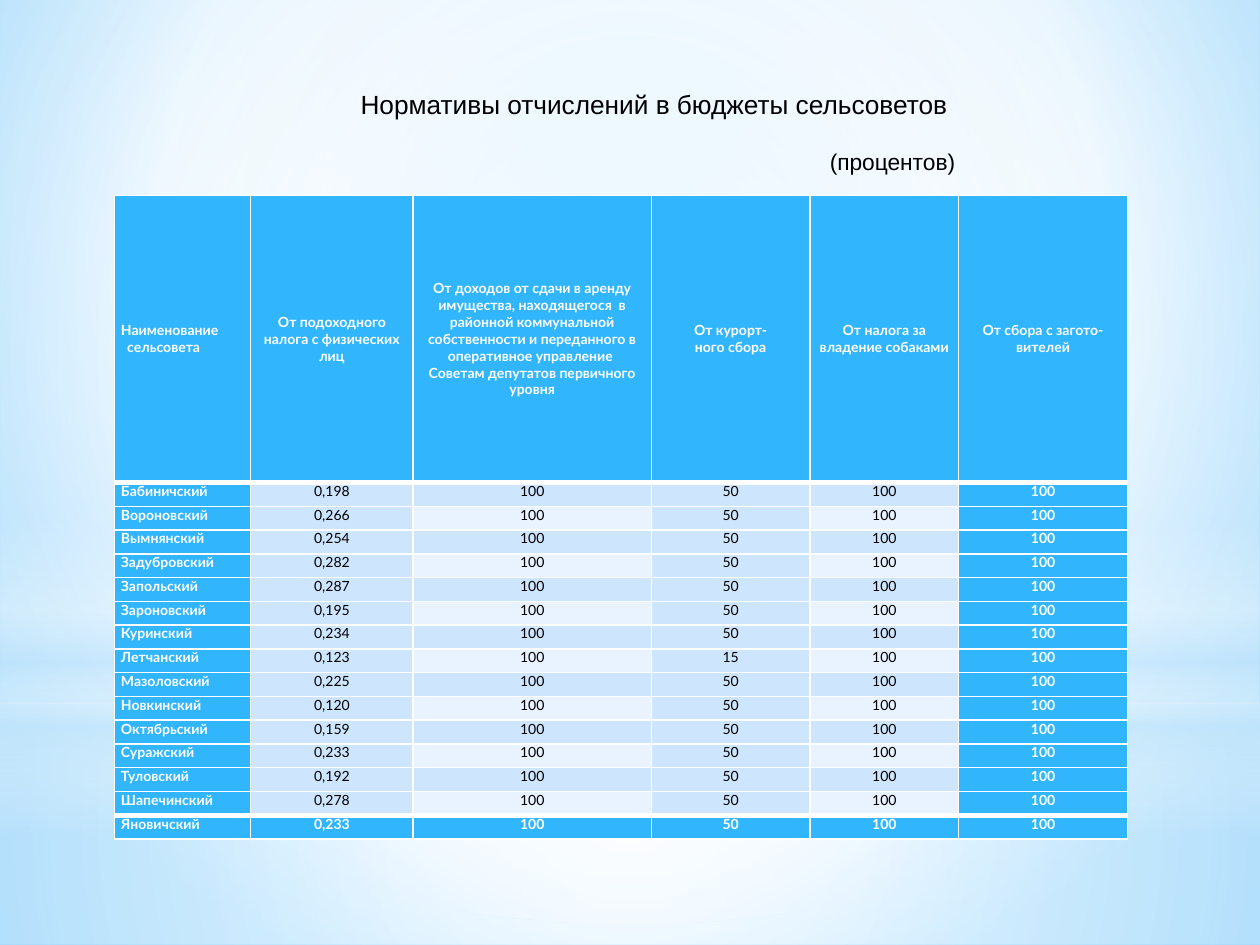
from lxml import etree
from pptx import Presentation
from pptx.dml.color import RGBColor
from pptx.enum.shapes import MSO_SHAPE
from pptx.enum.text import MSO_ANCHOR, PP_ALIGN
from pptx.oxml.ns import qn
from pptx.util import Inches, Pt

RECT, OVAL = MSO_SHAPE.RECTANGLE, MSO_SHAPE.OVAL
MIDDLE, TOP = MSO_ANCHOR.MIDDLE, MSO_ANCHOR.TOP
LEFT, CENTER, RIGHT = PP_ALIGN.LEFT, PP_ALIGN.CENTER, PP_ALIGN.RIGHT

WHITE = RGBColor(0xFF, 0xFF, 0xFF)
BLACK = RGBColor(0x00, 0x00, 0x00)
BLUE = RGBColor(0x31, 0xB6, 0xFD)
PALE = RGBColor(0xCE, 0xE5, 0xFE)
LIGHT = RGBColor(0xE8, 0xF3, 0xFF)
MIST = RGBColor(0xC6, 0xE7, 0xFC)
SKY = RGBColor(0xB0, 0xE0, 0xFF)
DEEP = RGBColor(0x6B, 0xC5, 0xFF)

WIDE, HIGH = 10, 7.5
COLS = [1.08, 1.29, 1.89, 1.26, 1.18, 1.34]
HEAD_H, TABLE_H = 2.28, 5.11
MID = (50, 50, 50, 50)

HEADS = [
    "Наименование\nсельсовета",
    "От подоходного налога с физических лиц",
    "От доходов от сдачи в аренду имущества, находящегося  в районной "
    "коммунальной собственности и переданного в оперативное управление "
    "\nСоветам депутатов первичного уровня",
    "От курорт-\nного сбора",
    "От налога за владение собаками",
    "От сбора с загото-\nвителей",
]
# council, income tax share, resort fee share
RATES = [
    ("Бабиничский", "0,198", "50"),
    ("Вороновский", "0,266", "50"),
    ("Вымнянский", "0,254", "50"),
    ("Задубровский", "0,282", "50"),
    ("Запольский", "0,287", "50"),
    ("Зароновский", "0,195", "50"),
    ("Куринский", "0,234", "50"),
    ("Летчанский", "0,123", "15"),
    ("Мазоловский", "0,225", "50"),
    ("Новкинский", "0,120", "50"),
    ("Октябрьский", "0,159", "50"),
    ("Суражский", "0,233", "50"),
    ("Туловский", "0,192", "50"),
    ("Шапечинский", "0,278", "50"),
    ("Яновичский", "0,233", "50"),
]
LAST = len(RATES)

# shape, top and height as shares of the slide, stops, focus (None = downward)
GLOWS = [
    (RECT, 0.744, 0.256,
     [(0, WHITE, 91), (37, WHITE, 76), (100, MIST, 79)], MID),
    (RECT, 0, 0.744,
     [(0, WHITE, 89), (48, WHITE, 62), (100, MIST, 79)], MID),
    (RECT, 0.55, 0.333,
     [(0, WHITE, 0), (29, WHITE, 30), (45, MIST, 40), (55, WHITE, 26),
      (65, MIST, 60), (100, WHITE, 0)], None),
    (OVAL, 0.233, 0.744, [(0, WHITE, 100), (56, WHITE, 0)], MID),
]


def add_node(parent, tag, **attrs):
    node = etree.SubElement(parent, qn(tag))
    for key, value in attrs.items():
        node.set(key, str(value))
    return node


def set_grad(fill, holder, stops, focus):
    """Fill with (position, colour, opacity) stops, all in percent."""
    fill.gradient()
    grad = holder.find(qn("a:gradFill"))
    for child in list(grad):
        grad.remove(child)
    group = add_node(grad, "a:gsLst")
    for place, color, alpha in stops:
        stop = add_node(group, "a:gs", pos=place * 1000)
        tint = add_node(stop, "a:srgbClr", val=color)
        if alpha < 100:
            add_node(tint, "a:alpha", val=alpha * 1000)
    if focus:
        path = add_node(grad, "a:path", path="circle")
        sides = {side: part * 1000 for side, part in zip("ltrb", focus)}
        add_node(path, "a:fillToRect", **sides)
    else:
        add_node(grad, "a:lin", ang=90 * 60000, scaled=0)


def add_back(slide, master):
    """Put the background and its glows on the master."""
    fill = master.background.fill
    set_grad(fill, master.element.cSld.bg.bgPr,
             [(0, SKY, 100), (60, WHITE, 100), (100, DEEP, 100)],
             (20, 10, 20, 60))
    for i, (kind, top, high, stops, focus) in enumerate(GLOWS):
        glow = slide.shapes.add_shape(
            kind, 0, Inches(top * HIGH), Inches(WIDE), Inches(high * HIGH))
        glow.shadow.inherit = False
        glow.line.fill.background()
        set_grad(glow.fill, glow.element.spPr, stops, focus)
        glow.element.nvSpPr.cNvPr.id = 20 + i
        master.shapes.element.insert(2 + i, glow.element)


def set_font(para, name, size, color, bold, align):
    para.font.name, para.font.size = name, Pt(size)
    para.font.color.rgb, para.font.bold = color, bold
    para.alignment = align


def add_title(slide):
    title = slide.shapes.title
    title.left, title.top = Inches(1.46), Inches(0.65)
    title.width, title.height = Inches(6.22), Inches(0.79)
    frame = title.text_frame
    frame.text = "Нормативы отчислений в бюджеты сельсоветов \n(процентов)"
    frame.word_wrap = True
    frame.vertical_anchor = MIDDLE
    for para, size, gap in zip(frame.paragraphs, (15, 13), (0, 16)):
        set_font(para, "Arial", size, BLACK, False, RIGHT)
        para.space_before = Pt(gap)


def set_edges(cell, row):
    thick = {"a:lnT": row in (1, LAST), "a:lnB": row in (0, LAST - 1)}
    props = cell._tc.get_or_add_tcPr()
    for i, tag in enumerate(("a:lnL", "a:lnR", "a:lnT", "a:lnB")):
        edge = add_node(props, tag, w=Pt(3 if thick.get(tag) else 1))
        add_node(add_node(edge, "a:solidFill"), "a:srgbClr", val=WHITE)
        props.insert(i, edge)


def pick_fill(row, col):
    if row in (0, LAST) or col in (0, 5):
        return BLUE
    return LIGHT if row % 2 == 0 and col in (2, 4) else PALE


def set_cell(cell, text, row, col):
    cell.text = text
    cell.margin_left = cell.margin_right = Inches(0.05)
    cell.margin_top = cell.margin_bottom = 0
    cell.vertical_anchor = MIDDLE if row == 0 else TOP
    color = pick_fill(row, col)
    cell.fill.solid()
    cell.fill.fore_color.rgb = color
    strong = color == BLUE
    for para in cell.text_frame.paragraphs:
        set_font(para, "Lato", 8, WHITE if strong else BLACK, strong,
                 CENTER if col else LEFT)
    set_edges(cell, row)


def add_rates(slide):
    rows = [HEADS] + [(name, tax, "100", fee, "100", "100")
                      for name, tax, fee in RATES]
    table = slide.shapes.add_table(
        len(rows), len(COLS), Inches(0.91), Inches(1.55),
        Inches(sum(COLS)), Inches(TABLE_H)).table
    for col, width in zip(table.columns, COLS):
        col.width = Inches(width)
    for r, texts in enumerate(rows):
        high = (TABLE_H - HEAD_H) / LAST if r else HEAD_H
        table.rows[r].height = Inches(high)
        for c, text in enumerate(texts):
            set_cell(table.cell(r, c), text, r, c)
    inner = table.cell(0, 0).text_frame.paragraphs[1]
    inner._p.get_or_add_pPr().set("marL", str(Inches(0.05)))


def main():
    deck = Presentation()
    deck.slide_width, deck.slide_height = Inches(WIDE), Inches(HIGH)
    slide = deck.slides.add_slide(deck.slide_layouts[5])
    add_back(slide, deck.slide_master)
    add_title(slide)
    add_rates(slide)
    deck.save("out.pptx")


if __name__ == "__main__":
    main()
